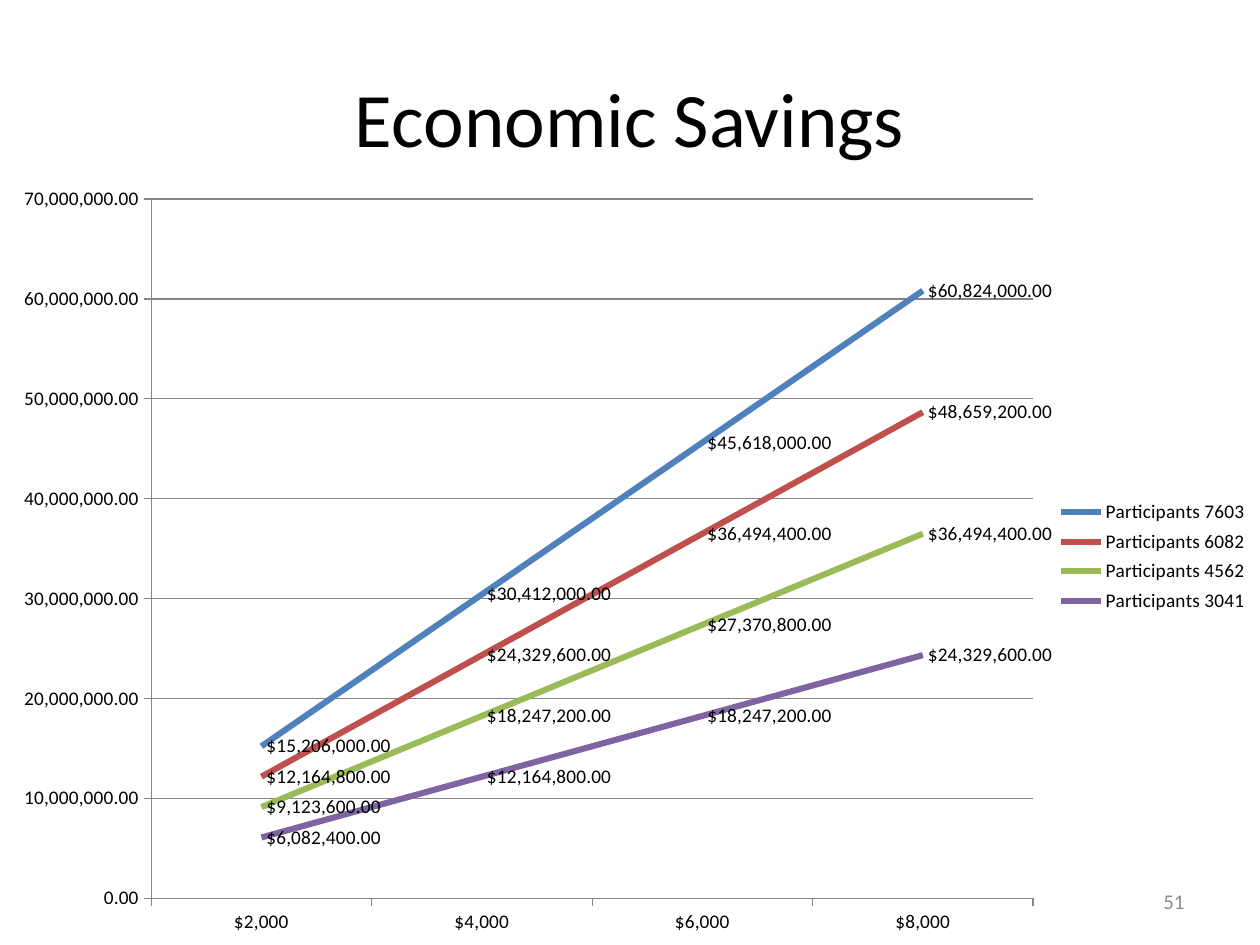
from lxml.etree import SubElement
from pptx import Presentation
from pptx.chart.data import CategoryChartData
from pptx.dml.color import RGBColor
from pptx.enum.chart import (XL_CHART_TYPE, XL_LABEL_POSITION,
                             XL_LEGEND_POSITION, XL_MARKER_STYLE, XL_TICK_MARK)
from pptx.enum.text import MSO_ANCHOR, PP_ALIGN
from pptx.oxml.ns import qn
from pptx.util import Pt

BLACK = RGBColor(0, 0, 0)
GREY = RGBColor(0x8C, 0x8C, 0x8C)
RULE = RGBColor(0x86, 0x86, 0x86)
BLUE = RGBColor(0x4F, 0x81, 0xBD)
RED = RGBColor(0xC0, 0x50, 0x4D)
GREEN = RGBColor(0x9B, 0xBB, 0x59)
PURPLE = RGBColor(0x80, 0x64, 0xA2)
FACE = "Calibri"

# Content: savings grow in equal steps from the first amount
TEXTS = [
    ("Economic Savings", (36, 21.6, 648, 90), 44, BLACK, PP_ALIGN.CENTER),
    ("51", (516, 500.5, 168, 28.75), 12, GREY, PP_ALIGN.RIGHT),
]
CATS = ["$2,000", "$4,000", "$6,000", "$8,000"]
LINES = [
    ("Participants 7603", 15206000, BLUE),
    ("Participants 6082", 12164800, RED),
    ("Participants 4562", 9123600, GREEN),
    ("Participants 3041", 6082400, PURPLE),
]
CHART = (0, 96, 720, 444)
PLOT = {"x": 0.12, "y": 0.04, "w": 0.7, "h": 0.9}
LEGEND = {"x": 0.83, "y": 0.42, "w": 0.17, "h": 0.16}


def style(item, **vals):
    for name, val in vals.items():
        setattr(item, name, val)


def place(node, spots, inner=False):
    """Fix a chart part at fractions of the chart area."""
    for old in node.findall(qn("c:layout")):
        node.remove(old)
    lay = SubElement(node, qn("c:layout"))
    man = SubElement(lay, qn("c:manualLayout"))
    rows = [("layoutTarget", "inner")] if inner else []
    rows += [("xMode", "edge"), ("yMode", "edge"), *spots.items()]
    for tag, val in rows:
        SubElement(man, qn("c:" + tag)).set("val", str(val))
    return lay


deck = Presentation()
style(deck, slide_width=Pt(720), slide_height=Pt(540))
slide = deck.slides.add_slide(deck.slide_layouts[6])

# Title and page number
for words, box, size, color, align in TEXTS:
    frame = slide.shapes.add_textbox(*map(Pt, box)).text_frame
    style(frame, word_wrap=True, vertical_anchor=MSO_ANCHOR.MIDDLE)
    para = frame.paragraphs[0]
    style(para, text=words, alignment=align)
    style(para.font, size=Pt(size), name=FACE)
    para.font.color.rgb = color

# Line chart
data = CategoryChartData()
data.categories = CATS
for name, first, _ in LINES:
    data.add_series(name, [first * n for n in range(1, len(CATS) + 1)])
chart = slide.shapes.add_chart(
    XL_CHART_TYPE.LINE, *map(Pt, CHART), data).chart
style(chart, has_title=False, has_legend=True)
style(chart.font, size=Pt(11), name=FACE)
chart.font.color.rgb = BLACK
chart.plots[0].vary_by_categories = False

# Lines and their labels
for line, (_, _, color) in zip(chart.plots[0].series, LINES):
    line.smooth = False
    line.marker.style = XL_MARKER_STYLE.NONE
    line.format.line.width = Pt(3.5)
    line.format.line.color.rgb = color
    style(line.data_labels, show_value=True, number_format='"$"#,##0.00',
          number_format_is_linked=False, position=XL_LABEL_POSITION.RIGHT)

# Axes
axis = chart.value_axis
style(axis, minimum_scale=0, maximum_scale=70000000, major_unit=10000000,
      has_major_gridlines=True)
style(axis.tick_labels, number_format="#,##0.00",
      number_format_is_linked=False)
for part in (axis, chart.category_axis):
    part.major_tick_mark = XL_TICK_MARK.OUTSIDE
for part in (axis, chart.category_axis, axis.major_gridlines):
    part.format.line.width = Pt(0.75)
    part.format.line.color.rgb = RULE

# Legend and plot places
style(chart.legend, position=XL_LEGEND_POSITION.RIGHT,
      include_in_layout=False)
key = chart.legend._element
key.find(qn("c:legendPos")).addnext(place(key, LEGEND))
area = chart._chartSpace.chart.plotArea
area.insert(0, place(area, PLOT, inner=True))

deck.save("out.pptx")
